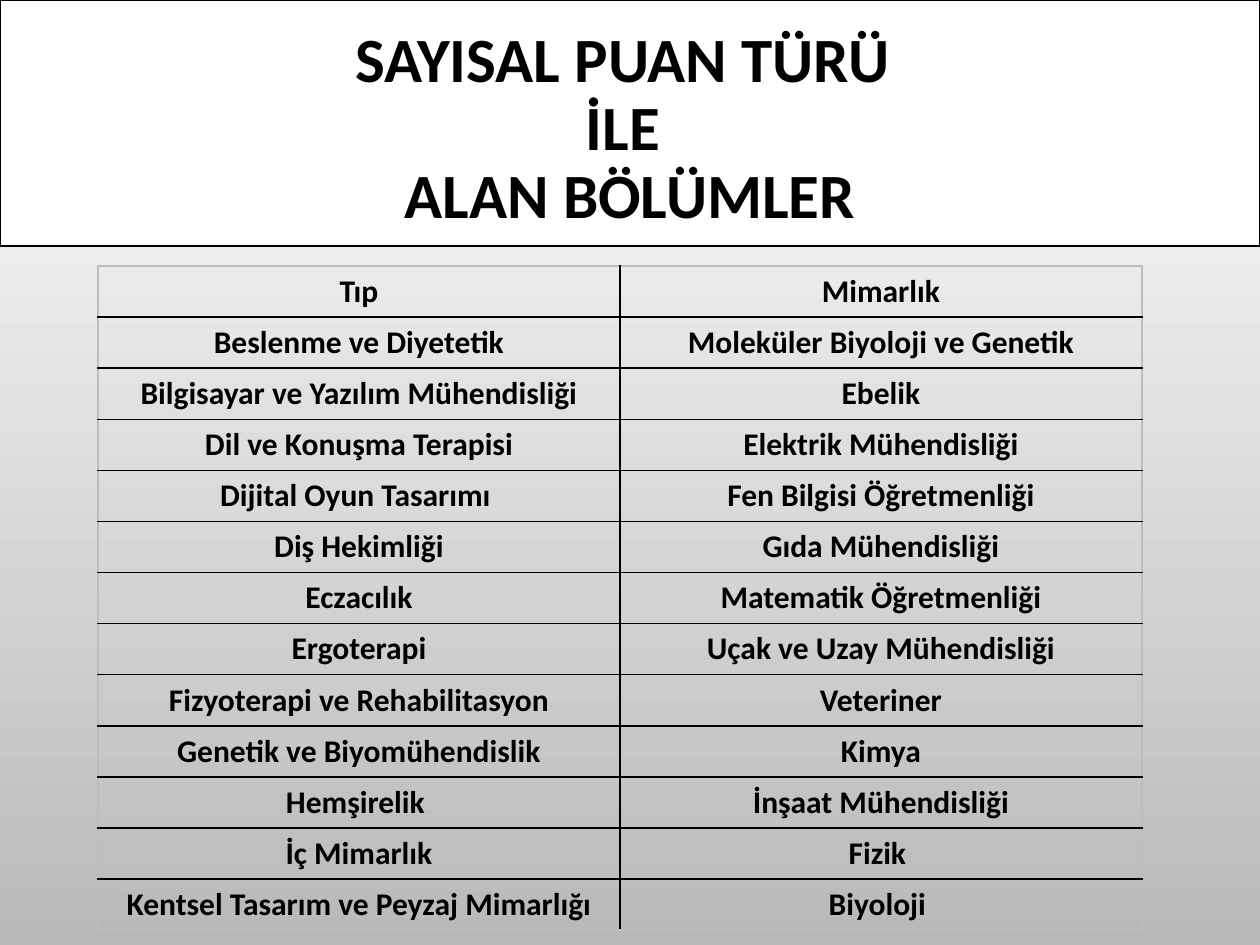
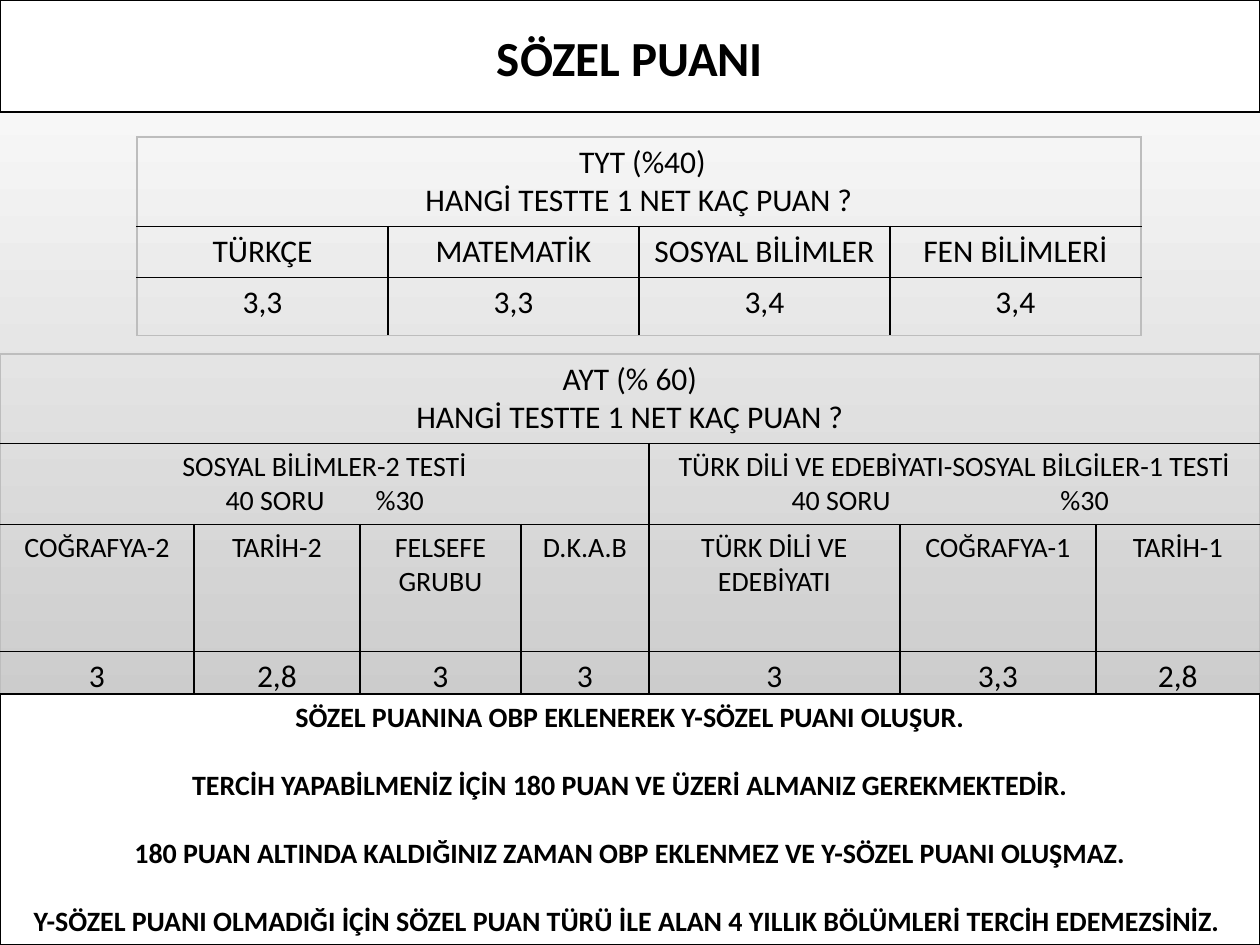
"""Build two slides on numerical departments and the verbal score."""
from dataclasses import dataclass

import lxml.etree
import pptx
import pptx.dml.color
import pptx.enum.shapes
import pptx.enum.text
import pptx.oxml.ns
import pptx.util

COLORS = {"paper": "FFFFFF", "shade": "B9B9B9", "ink": "000000", "rim": "BDBDBD"}
FONT = "Calibri"
WIDTH, HEIGHT = 1260, 945
CENTER = pptx.enum.text.PP_ALIGN.CENTER
LEFT = pptx.enum.text.PP_ALIGN.LEFT
TOP = pptx.enum.text.MSO_ANCHOR.TOP
MIDDLE = pptx.enum.text.MSO_ANCHOR.MIDDLE


@dataclass(frozen=True)
class Band:
    text: str
    top: int
    height: int
    size: int
    inset: int = 6
    anchor: pptx.enum.text.MSO_ANCHOR = TOP
    line_spacing: float = 1.0
    gap: float = 0


@dataclass(frozen=True)
class Cell:
    text: str
    size: int = 18
    bold: bool = False
    span: int = 1
    tabs: tuple[int, ...] = ()


@dataclass(frozen=True)
class Grid:
    left: int
    top: int
    cols: list[int]
    rows: list[int]
    cells: list[list[Cell]]


DEPARTMENTS = [
    ("Tıp", "Mimarlık"),
    ("Beslenme ve Diyetetik", "Moleküler Biyoloji ve Genetik"),
    ("Bilgisayar ve Yazılım Mühendisliği", "Ebelik"),
    ("Dil ve Konuşma Terapisi", "Elektrik Mühendisliği"),
    ("Dijital Oyun Tasarımı ", "Fen Bilgisi Öğretmenliği"),
    ("Diş Hekimliği", "Gıda Mühendisliği"),
    ("Eczacılık", "Matematik Öğretmenliği"),
    ("Ergoterapi", "Uçak ve Uzay Mühendisliği"),
    ("Fizyoterapi ve Rehabilitasyon", "Veteriner"),
    ("Genetik ve Biyomühendislik", "Kimya"),
    ("Hemşirelik ", "İnşaat Mühendisliği"),
    ("İç Mimarlık", "Fizik "),
    ("Kentsel Tasarım ve Peyzaj Mimarlığı", "Biyoloji "),
]
QUESTION = "HANGİ TESTTE 1 NET KAÇ PUAN ?"

DEPARTMENT_TITLE = Band("SAYISAL PUAN TÜRÜ \vİLE \vALAN BÖLÜMLER", 0, 246, 36,
                        inset=20, anchor=MIDDLE, line_spacing=0.9)
SCORE_TITLE = Band("SÖZEL PUANI", 0, 112, 28, inset=28)
SCORE_NOTE = Band(
    "SÖZEL PUANINA OBP EKLENEREK Y-SÖZEL PUANI OLUŞUR.\n"
    "TERCİH YAPABİLMENİZ İÇİN 180 PUAN VE ÜZERİ ALMANIZ GEREKMEKTEDİR.\n"
    "180 PUAN ALTINDA KALDIĞINIZ ZAMAN OBP EKLENMEZ VE Y-SÖZEL PUANI OLUŞMAZ.\n"
    "Y-SÖZEL PUANI OLMADIĞI İÇİN SÖZEL PUAN TÜRÜ İLE ALAN 4 YILLIK BÖLÜMLERİ "
    "TERCİH EDEMEZSİNİZ. ",
    694, 251, 16, gap=19.5)


def row_of(texts: list[str], size: int = 18, bold: bool = False) -> list[Cell]:
    """Return one plain table row."""
    return [Cell(text, size, bold) for text in texts]


DEPARTMENT_GRID = Grid(98, 266, [522] * 2, [51] * len(DEPARTMENTS),
                       [row_of(pair, bold=True) for pair in DEPARTMENTS])
TYT_GRID = Grid(137, 137, [251] * 4, [89, 50, 58], [
    [Cell(f" TYT (%40)\n{QUESTION}", span=4)],
    row_of(["TÜRKÇE", "MATEMATİK", "SOSYAL BİLİMLER", "FEN BİLİMLERİ"]),
    row_of(["3,3", "3,3", "3,4", "3,4"]),
])
AYT_GRID = Grid(0, 354, [194, 166, 161, 128, 251, 196, 164], [88, 80, 127, 50], [
    [Cell(f"AYT (% 60)\n{QUESTION}", span=7)],
    [Cell("SOSYAL BİLİMLER-2 TESTİ\n\t40 SORU\t%30", 16, span=4, tabs=(213, 363)),
     Cell("TÜRK DİLİ VE EDEBİYATI-SOSYAL BİLGİLER-1 TESTİ\n\t40 SORU\t%30", 16,
          span=3, tabs=(130, 399))],
    row_of(["COĞRAFYA-2", "TARİH-2", "FELSEFE GRUBU", "D.K.A.B",
            "TÜRK DİLİ VE EDEBİYATI", "COĞRAFYA-1", "TARİH-1"], 16),
    row_of(["3", "2,8", "3", "3", "3", "3,3", "2,8"]),
])


def px(length: int) -> int:
    """Convert px to EMU."""
    return length * 914400 // 126


def rgb(name: str) -> pptx.dml.color.RGBColor:
    """Look up a named colour."""
    return pptx.dml.color.RGBColor.from_string(COLORS[name])


def set_all(target, values: dict) -> None:
    """Set every attribute in values on target."""
    for name, value in values.items():
        setattr(target, name, value)


def add_xml(parent, tag: str, **attrs: str):
    """Append a DrawingML element."""
    return lxml.etree.SubElement(parent, pptx.oxml.ns.qn(tag), attrs)


def write_text(tf, text: str, size: int, bold: bool, tabs: tuple[int, ...] = (),
               line_spacing: float = 1.0, gap: float = 0) -> None:
    """Fill a text frame, one paragraph for each line of text."""
    for i, line in enumerate(text.split("\n")):
        p = tf.add_paragraph() if i else tf.paragraphs[0]
        p.text = line
        set_all(p, {"alignment": LEFT if "\t" in line else CENTER,
                    "line_spacing": line_spacing,
                    "space_before": pptx.util.Pt(gap if i else 0)})
        if "\t" in line:
            stops = add_xml(p._p.get_or_add_pPr(), "a:tabLst")
            for stop in tabs:
                add_xml(stops, "a:tab", pos=str(px(stop)), algn="l")
        for r in p.runs:
            set_all(r.font, {"name": FONT, "size": pptx.util.Pt(size), "bold": bold})
            r.font.color.rgb = rgb("ink")


def format_band(sp, band: Band) -> None:
    """Place a full-width white band and write its text."""
    set_all(sp, {"left": 0, "top": px(band.top),
                 "width": px(WIDTH), "height": px(band.height)})
    sp.fill.solid()
    sp.fill.fore_color.rgb = rgb("paper")
    sp.line.color.rgb = rgb("ink")
    sp.line.width = pptx.util.Pt(1.25)
    tf = sp.text_frame
    set_all(tf, {"word_wrap": True, "vertical_anchor": band.anchor,
                 "auto_size": pptx.enum.text.MSO_AUTO_SIZE.NONE,
                 "margin_top": px(band.inset), "margin_bottom": px(6)})
    write_text(tf, band.text, band.size, True,
               line_spacing=band.line_spacing, gap=band.gap)


def add_note(s, band: Band) -> None:
    """Add a band that is not a title."""
    sp = s.shapes.add_shape(pptx.enum.shapes.MSO_SHAPE.RECTANGLE, 0, 0, 0, 0)
    sp.shadow.inherit = False
    format_band(sp, band)


def set_borders(cell, edges: dict[str, bool]) -> None:
    """Draw each edge, black inside the table and grey on its rim."""
    tcPr = cell._tc.get_or_add_tcPr()
    for side, is_rim in edges.items():
        ln = add_xml(tcPr, f"a:ln{side}", w=str(pptx.util.Pt(1)))
        fill = add_xml(ln, "a:solidFill")
        add_xml(fill, "a:srgbClr", val=COLORS["rim" if is_rim else "ink"])


def add_grid(s, grid: Grid) -> None:
    """Add a table with merged headings and thin borders."""
    n_rows, n_cols = len(grid.rows), len(grid.cols)
    table = s.shapes.add_table(n_rows, n_cols, px(grid.left), px(grid.top),
                               px(sum(grid.cols)), px(sum(grid.rows))).table
    set_all(table, {"first_row": False, "horz_banding": False})
    for column, width in zip(table.columns, grid.cols):
        column.width = px(width)
    for i, (row, height) in enumerate(zip(table.rows, grid.rows)):
        row.height = px(height)
        start = 0
        for item in grid.cells[i]:
            end = start + item.span
            if item.span > 1:
                table.cell(i, start).merge(table.cell(i, end - 1))
            for j in range(start, end):
                cell = table.cell(i, j)
                edges = {"T": i == 0, "B": i == n_rows - 1}
                if j == start:
                    edges = {"L": start == 0, "R": end == n_cols} | edges
                set_borders(cell, edges)
                cell.fill.background()
            write_text(table.cell(i, start).text_frame, item.text,
                       item.size, item.bold, item.tabs)
            start = end


def set_background(prs) -> None:
    """Give every slide the white to grey gradient."""
    fill = prs.slide_master.background.fill
    fill.gradient()
    fill.gradient_angle = 270
    for stop, name in zip(fill.gradient_stops, ("paper", "shade")):
        stop.color.rgb = rgb(name)


def add_slide(prs, title: Band, grids: list[Grid]):
    """Add a slide with a title band and its tables."""
    s = prs.slides.add_slide(prs.slide_layouts.get_by_name("Title Only"))
    format_band(s.shapes.title, title)
    for grid in grids:
        add_grid(s, grid)
    return s


def main() -> None:
    """Build and save the presentation."""
    prs = pptx.Presentation()
    set_all(prs, {"slide_width": px(WIDTH), "slide_height": px(HEIGHT)})
    set_background(prs)
    add_slide(prs, DEPARTMENT_TITLE, [DEPARTMENT_GRID])
    s = add_slide(prs, SCORE_TITLE, [TYT_GRID, AYT_GRID])
    add_note(s, SCORE_NOTE)
    prs.save("out.pptx")


if __name__ == "__main__":
    main()
